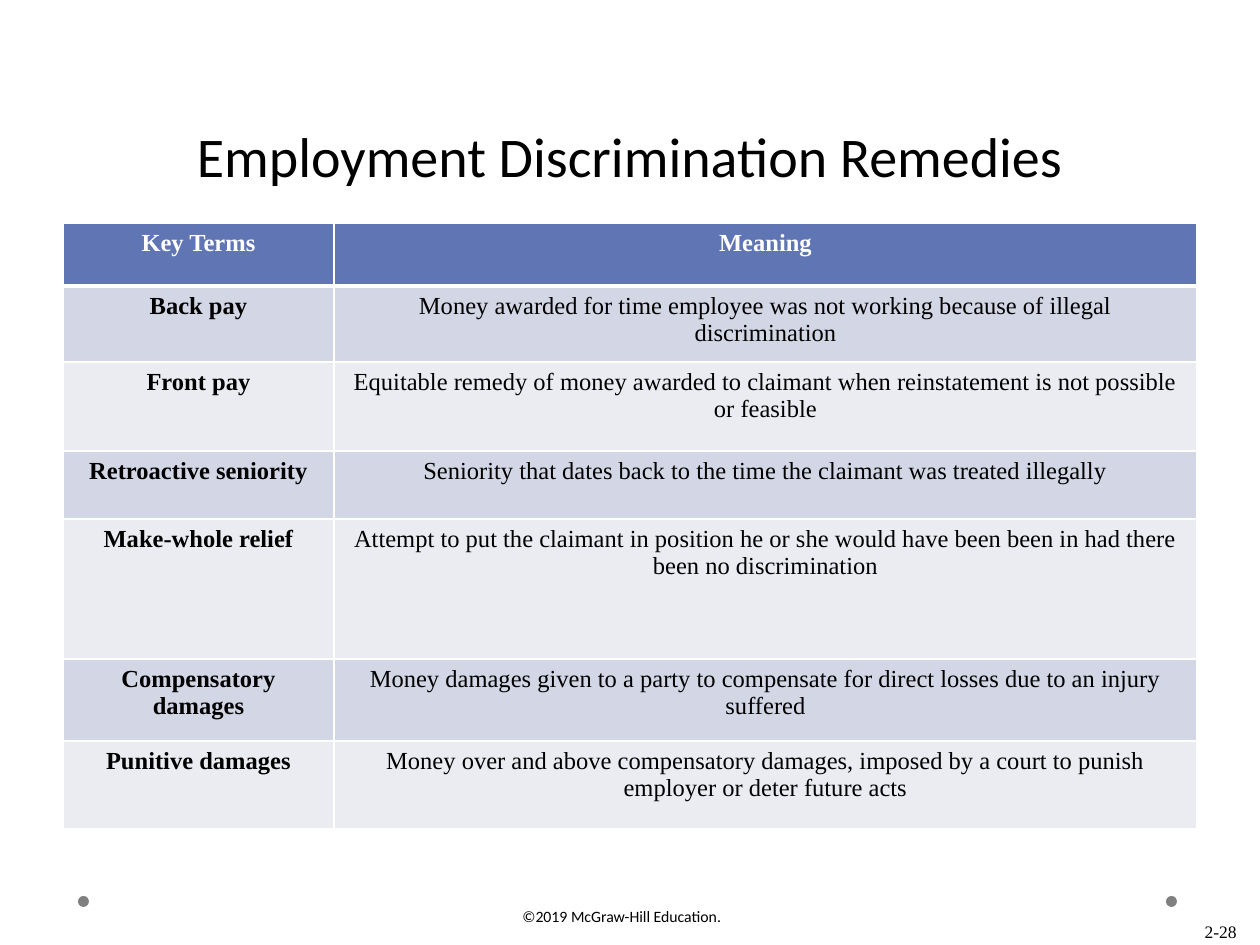
from lxml.etree import SubElement
from pptx import Presentation
from pptx.dml.color import RGBColor
from pptx.enum.shapes import MSO_SHAPE as Shape
from pptx.enum.text import MSO_ANCHOR as Anchor, PP_ALIGN as Align
from pptx.oxml.ns import qn
from pptx.util import Emu, Pt

PX_PER_INCH = 126
SERIF, SANS = "Times New Roman", "Calibri"
BLACK, WHITE, GREY = "000000", "FFFFFF", "808080"
HEADER_FILL, BAND_FILLS = "6076B4", ("D2D6E5", "EAECF2")

COLUMN_WIDTHS = (271, 863)
ROW_HEIGHTS = (63, 76, 89, 68, 140, 82, 88)
REMEDIES = (
    ("Key Terms", "Meaning"),
    ("Back pay", "Money awarded for time employee was not working because of "
     "illegal discrimination"),
    ("Front pay", "Equitable remedy of money awarded to claimant when "
     "reinstatement is not possible or feasible"),
    ("Retroactive seniority", "Seniority that dates back to the time the "
     "claimant was treated illegally"),
    ("Make-whole relief", "Attempt to put the claimant in position he or she "
     "would have been been in had there been no discrimination"),
    ("Compensatory damages", "Money damages given to a party to compensate "
     "for direct losses due to an injury suffered"),
    ("Punitive damages", "Money over and above compensatory damages, imposed "
     "by a court to punish employer or deter future acts"),
)


def px(length):
    return Emu(round(length * 914400 / PX_PER_INCH))


def color(value):
    return RGBColor.from_string(value)


def write(frame, text, size=14, font=SERIF, ink=BLACK, bold=False,
          align=Align.CENTER, spacing=None):
    frame.word_wrap = True
    para = frame.paragraphs[0]
    para.alignment = align
    if spacing:
        para.line_spacing = Pt(spacing)
    span = para.add_run()
    span.text = text
    span.font.size = Pt(size)
    span.font.name = font
    span.font.bold = bold
    span.font.color.rgb = color(ink)


def add_text(page, text, left, top, width, height, anchor=Anchor.TOP, **style):
    box = page.shapes.add_textbox(px(left), px(top), px(width), px(height))
    box.text_frame.vertical_anchor = anchor
    write(box.text_frame, text, **style)


def add_dot(page, left, top, size):
    dot = page.shapes.add_shape(Shape.OVAL, px(left), px(top), px(size), px(size))
    dot.shadow.inherit = False
    dot.fill.solid()
    dot.fill.fore_color.rgb = color(GREY)
    dot.line.fill.background()


def set_borders(cell, **widths):
    """Draw white borders; they must precede the fill in the cell properties."""
    properties = cell._tc.get_or_add_tcPr()
    for index, (side, width) in enumerate(widths.items()):
        line = SubElement(properties, qn(f"a:ln{side}"), w=str(Pt(width)))
        fill = SubElement(line, qn("a:solidFill"))
        SubElement(fill, qn("a:srgbClr"), val=WHITE)
        properties.insert(index, line)


def add_remedy_table(page, left, top):
    table = page.shapes.add_table(
        len(REMEDIES), len(COLUMN_WIDTHS), px(left), px(top),
        px(sum(COLUMN_WIDTHS)), px(sum(ROW_HEIGHTS))).table
    for column, width in zip(table.columns, COLUMN_WIDTHS):
        column.width = px(width)
    for r, (height, texts) in enumerate(zip(ROW_HEIGHTS, REMEDIES)):
        table.rows[r].height = px(height)
        header = r == 0
        for c, text in enumerate(texts):
            cell = table.cell(r, c)
            cell.fill.solid()
            cell.fill.fore_color.rgb = color(
                HEADER_FILL if header else BAND_FILLS[(r - 1) % 2])
            set_borders(cell, L=1, R=1, T=3 if r == 1 else 1, B=3 if header else 1)
            write(cell.text_frame, text, bold=header or c == 0,
                  ink=WHITE if header else BLACK)


def main():
    deck = Presentation()
    deck.slide_width, deck.slide_height = px(1260), px(945)
    page = deck.slides.add_slide(deck.slide_layouts[6])

    # Footer
    for left in (1166, 78):
        add_dot(page, left, 896, 11)
    add_text(page, "2-28", 955, 885, 294, 63, anchor=Anchor.BOTTOM,
             size=10, align=Align.RIGHT)
    add_text(page, "©2019 McGraw-Hill Education.", 510, 901, 233, 25,
             size=9, font=SANS, align=Align.LEFT)

    # Title and table
    add_text(page, "Employment Discrimination Remedies", 63, 38, 1134, 157,
             anchor=Anchor.BOTTOM, size=32, font=SANS, spacing=58)
    add_remedy_table(page, 63, 223)

    deck.save("out.pptx")


if __name__ == "__main__":
    main()
